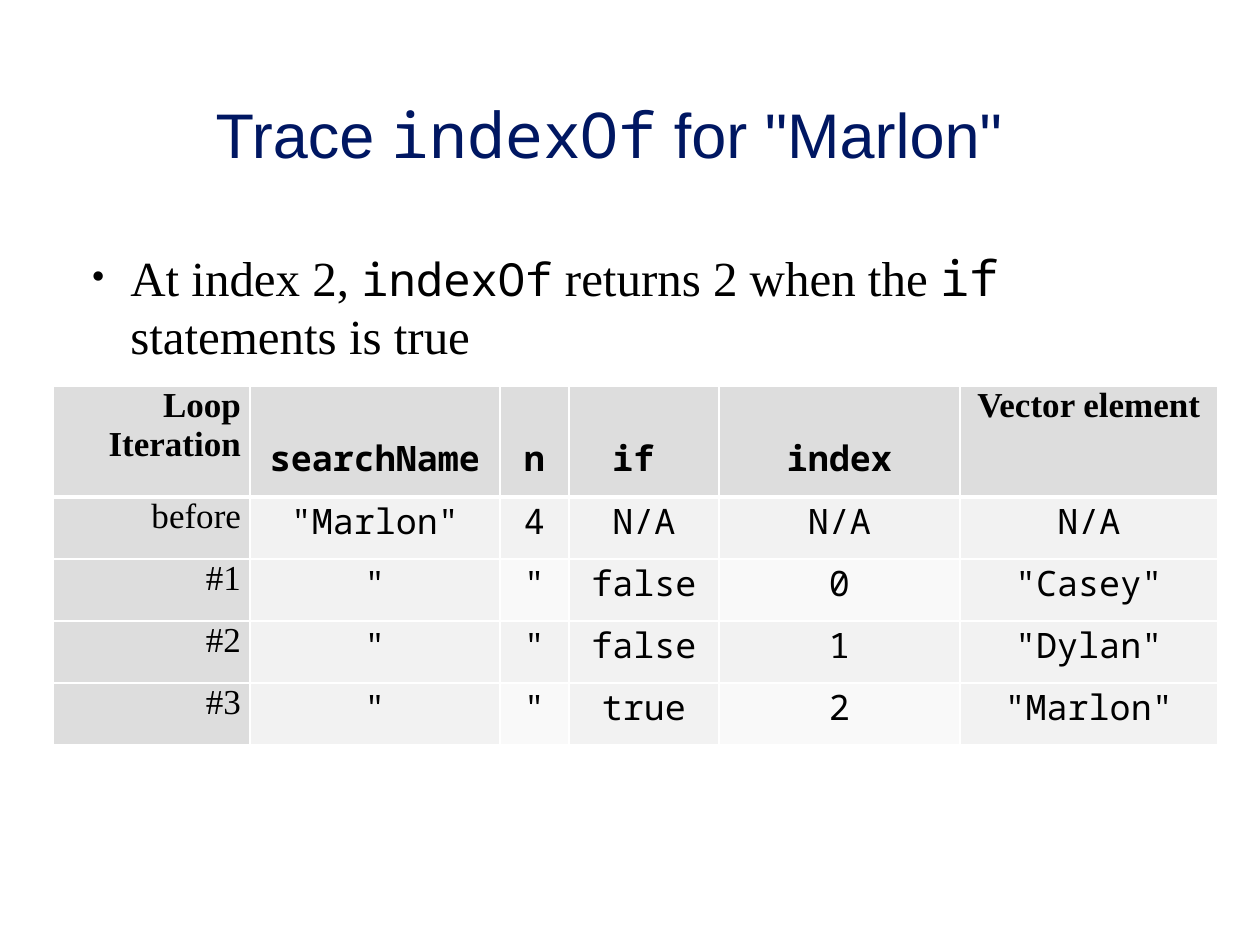
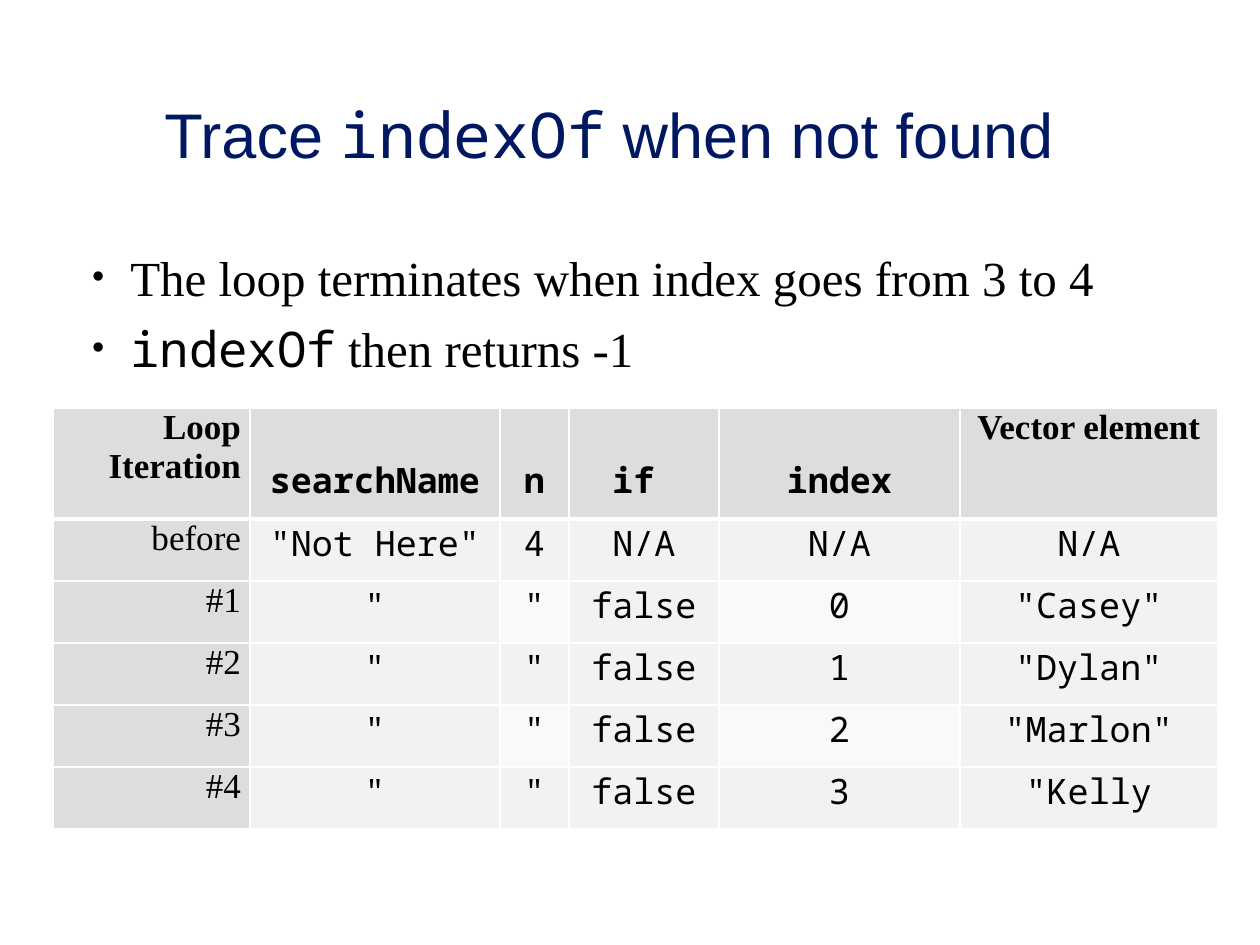
from lxml import etree
from pptx import Presentation
from pptx.dml.color import RGBColor
from pptx.enum.text import MSO_ANCHOR, MSO_AUTO_SIZE, PP_ALIGN
from pptx.oxml.ns import qn
from pptx.util import Emu, Pt

LEFT, CENTER, RIGHT = PP_ALIGN.LEFT, PP_ALIGN.CENTER, PP_ALIGN.RIGHT
TOP, MIDDLE, BOTTOM = MSO_ANCHOR.TOP, MSO_ANCHOR.MIDDLE, MSO_ANCHOR.BOTTOM
NO_FIT = MSO_AUTO_SIZE.NONE

PX = 914400 / 126
COLORS = {
    "title": "001762",
    "text": "000000",
    "heading": "DDDDDD",
    "cell": "F2F2F2",
    "band": "F9F9F9",
    "border": "FFFFFF",
}
SANS, SERIF, MONO = "Arial", "Times New Roman", "Noto Sans Mono"

TITLE_AREA = (21, 47, 1176, 184)
COLUMN_WIDTHS = (197, 250, 69, 150, 241, 258)
HEADER_HEIGHT, ROW_HEIGHT = 111, 62
HEADER = ("Loop\nIteration", "searchName", "n", "if ", "index", "Vector element")

SLIDES = [
    {
        "title": [("Trace ", SANS), ("indexOf", MONO), (' for "Marlon"', SANS)],
        "bullets": [[
            ("At index 2, ", SERIF, 28), ("indexOf", MONO, 26),
            (" returns 2 when the ", SERIF, 28), ("if", MONO, 28),
            (" statements is true", SERIF, 28),
        ]],
        "bullets_height": 116,
        "table_top": 386,
        "search_name": '"Marlon"',
        "iterations": [("false", '"Casey"'), ("false", '"Dylan"'), ("true", '"Marlon"')],
    },
    {
        "title": [("Trace ", SANS), ("indexOf", MONO), (" when not found", SANS)],
        "bullets": [
            [("The loop terminates when index goes from 3 to 4", SERIF, 28)],
            [("indexOf", MONO, 28), (" then returns -1", SERIF, 28)],
        ],
        "bullets_height": 136,
        "table_top": 408,
        "search_name": '"Not Here"',
        "iterations": [("false", '"Casey"'), ("false", '"Dylan"'),
                       ("false", '"Marlon"'), ("false", '"Kelly')],
    },
]


def px(*lengths):
    return [Emu(round(length * PX)) for length in lengths]


def add_span(para, text, font, size, color="text", bold=False):
    span = para.add_run()
    span.text = text
    for name, value in {"name": font, "size": Pt(size), "bold": bold}.items():
        setattr(span.font, name, value)
    span.font.color.rgb = RGBColor.from_string(COLORS[color])


deck = Presentation()
deck.slide_width, deck.slide_height = px(1260, 945)

for content in SLIDES:
    page = deck.slides.add_slide(deck.slide_layouts[5])

    # Title
    title = page.shapes.title
    title.left, title.top, title.width, title.height = px(*TITLE_AREA)
    title.text_frame.auto_size = NO_FIT
    title.text_frame.vertical_anchor = MIDDLE
    para = title.text_frame.paragraphs[0]
    para.alignment, para.line_spacing = CENTER, 0.87
    for text, font in content["title"]:
        add_span(para, text, font, 36, "title")

    # Trace table
    rows = [HEADER, ("before", content["search_name"], "4", "N/A", "N/A", "N/A")]
    for index, (test, element) in enumerate(content["iterations"]):
        rows.append((f"#{index + 1}", '"', '"', test, str(index), element))
    heights = [HEADER_HEIGHT] + [ROW_HEIGHT] * (len(rows) - 1)
    area = px(53, content["table_top"], sum(COLUMN_WIDTHS), sum(heights))
    table = page.shapes.add_table(len(rows), len(HEADER), *area).table
    table.horz_banding = False
    for column, width in zip(table.columns, px(*COLUMN_WIDTHS)):
        column.width = width
    for row, height in zip(table.rows, px(*heights)):
        row.height = height

    for r, values in enumerate(rows):
        for c, value in enumerate(values):
            cell = table.cell(r, c)
            is_header = r == 0
            is_code = 0 < c < 5 or (c == 5 and not is_header)
            low = is_header and is_code
            side, bottom = px(9, 15 if low else 0)
            cell_format = {
                "margin_left": side, "margin_right": side,
                "margin_top": 0, "margin_bottom": bottom,
                "vertical_anchor": BOTTOM if low else TOP,
            }
            for name, setting in cell_format.items():
                setattr(cell, name, setting)

            # Borders come before the fill in the cell properties
            properties = cell._tc.get_or_add_tcPr()
            thick = {0: "lnB", 1: "lnT"}.get(r)
            for edge in ("lnL", "lnR", "lnT", "lnB"):
                width = Pt(3 if edge == thick else 1)
                line = etree.SubElement(properties, qn(f"a:{edge}"), w=str(width))
                fill = etree.SubElement(line, qn("a:solidFill"))
                etree.SubElement(fill, qn("a:srgbClr"), val=COLORS["border"])

            if is_header or c == 0:
                shade = "heading"
            else:
                shade = "band" if r % 2 == 0 and c in (2, 4) else "cell"
            cell.fill.solid()
            cell.fill.fore_color.rgb = RGBColor.from_string(COLORS[shade])

            frame = cell.text_frame
            for number, text in enumerate(value.split("\n")):
                para = frame.add_paragraph() if number else frame.paragraphs[0]
                para.alignment = CENTER if c else RIGHT
                add_span(para, text, MONO if is_code else SERIF, 20, bold=is_header)

    # Bullets
    box = page.shapes.add_textbox(*px(63, 241, 1160, content["bullets_height"]))
    frame = box.text_frame
    frame.word_wrap = True
    for number, spans in enumerate(content["bullets"]):
        para = frame.add_paragraph() if number else frame.paragraphs[0]
        para.alignment, para.level, para.space_before = LEFT, 1, Pt(7)
        properties = para._p.get_or_add_pPr()
        for name, indent in zip(("marL", "indent"), px(55, -39)):
            properties.set(name, str(indent))
        bullet_color = etree.SubElement(properties, qn("a:buClr"))
        etree.SubElement(bullet_color, qn("a:srgbClr"), val=COLORS["text"])
        etree.SubElement(properties, qn("a:buSzPct"), val="80000")
        etree.SubElement(properties, qn("a:buFont"), typeface=SERIF)
        etree.SubElement(properties, qn("a:buChar"), char="•")
        for text, font, size in spans:
            add_span(para, text, font, size)

deck.save("out.pptx")
